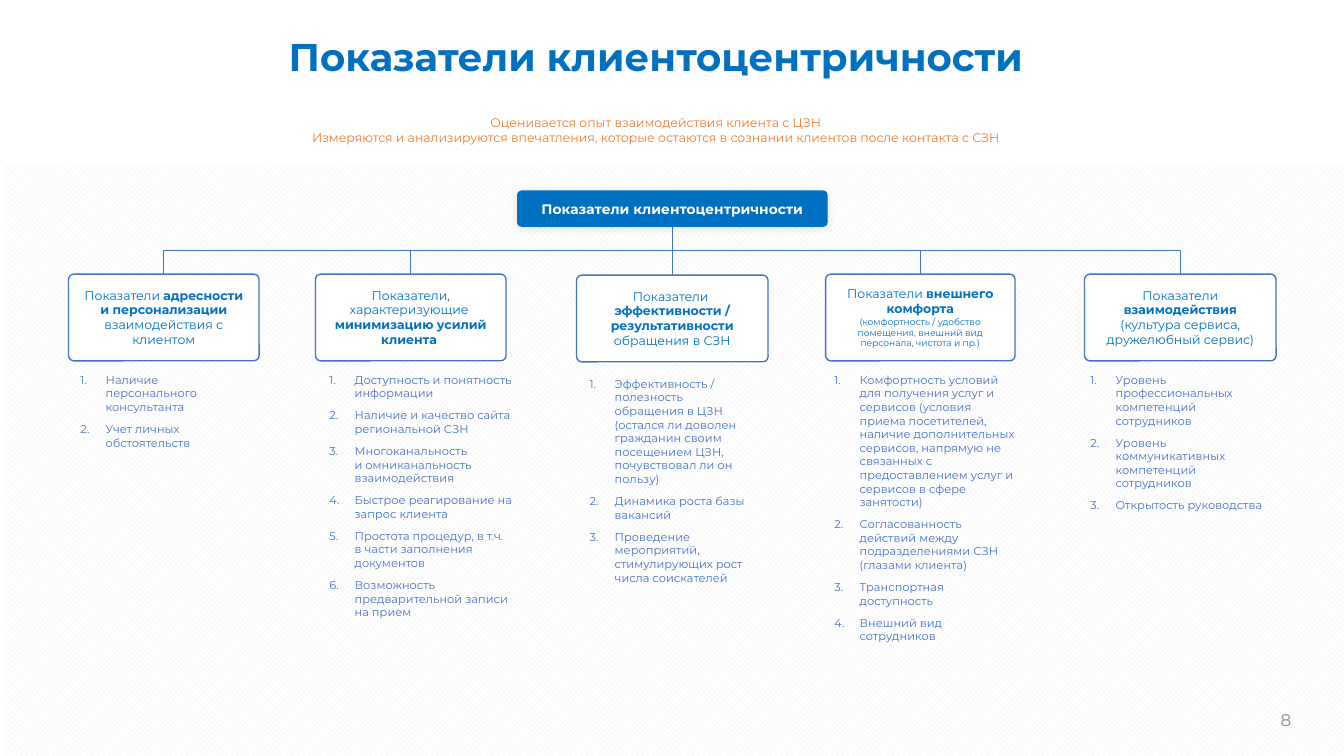
from lxml.etree import SubElement
from pptx import Presentation
from pptx.dml.color import RGBColor
from pptx.enum.dml import MSO_PATTERN
from pptx.enum.shapes import MSO_CONNECTOR, MSO_SHAPE
from pptx.enum.text import MSO_ANCHOR, PP_ALIGN
from pptx.oxml.ns import qn
from pptx.util import Pt

BLUE, LINE, ORANGE, GREY, WHITE = "0070C0", "4472C4", "ED7D31", "8C8C8C", "FFFFFF"
TOP, HIGH = 195.84, 61.92
MID, BASE = 480.24, 162

COLS = [
    (48.96, 0, 136.08, ["Показатели *адресности и персонализации *взаимодействия с клиентом"],
     50.4, 262.8, 136.08, 62.6,
     ["Наличие персонального консультанта", "Учет личных обстоятельств"]),
    (225.36, 0, 136.08, ["Показатели, характеризующие ", "*минимизацию усилий клиента *"],
     228.24, 262.8, 145.44, 185,
     ["Доступность и понятность информации",
      "Наличие и качество сайта региональной СЗН",
      "Многоканальность \nи омниканальность взаимодействия",
      "Быстрое реагирование на запрос клиента",
      "Простота процедур, в т.ч. в части заполнения документов",
      "Возможность предварительной записи на прием"]),
    (411.84, 0.72, 136.8,
     ["Показатели ", "*эффективности / результативности *обращения в СЗН"],
     414, 265.68, 128.88, 157,
     ["Эффективность / полезность обращения в ЦЗН (остался ли доволен гражданин "
      "своим посещением ЦЗН, почувствовал ли он пользу)",
      "Динамика роста базы вакансий",
      "Проведение мероприятий, стимулирующих рост числа соискателей"]),
    (589.68, 0, 135.36,
     ["Показатели *внешнего комфорта*",
      "(комфортность / удобство помещения, внешний вид персонала, чистота и пр.)"],
     588.96, 262.8, 144, 203,
     ["Комфортность условий для получения услуг и сервисов (условия приема "
      "посетителей, наличие дополнительных сервисов, напрямую не связанных с "
      "предоставлением услуг и сервисов в сфере занятости)",
      "Согласованность действий между подразделениями СЗН (глазами клиента)",
      "Транспортная доступность", "Внешний вид сотрудников"]),
    (774.72, 0, 136.8,
     ["Показатели", "*взаимодействия*", "(культура сервиса, дружелюбный сервис)"],
     771.84, 262.8, 138.96, 108,
     ["Уровень профессиональных компетенций сотрудников",
      "Уровень коммуникативных компетенций сотрудников",
      "Открытость руководства"]),
]


def tint(code):
    return RGBColor.from_string(code)


class Deck:
    """Holds the font and the current slide, and draws each kind of element."""

    def __init__(self, font):
        self.font = font
        self.file = Presentation()
        self.file.slide_width, self.file.slide_height = Pt(960), Pt(540)
        self.slide = self.file.slides.add_slide(self.file.slide_layouts[6])

    def words(self, frame, lines, size, color, align=PP_ALIGN.CENTER, listed=False):
        frame.word_wrap = True
        for i, line in enumerate(lines):
            para = frame.paragraphs[0] if i == 0 else frame.add_paragraph()
            if listed:
                props = para._p.get_or_add_pPr()
                props.set("marL", str(Pt(18)))
                props.set("indent", str(-Pt(18)))
                SubElement(props, qn("a:buAutoNum"), type="arabicPeriod")
                para.space_after = Pt(6)
            para.alignment = align
            para.font.name, para.font.size = self.font, Pt(size)
            para.font.color.rgb = tint(color)
            parts = [(text, n % 2 == 1) for n, text in enumerate(line.split("*")) if text]
            if len(parts) == 1:
                para.text, para.font.bold = parts[0]
                continue
            for text, bold in parts:
                run = para.add_run()
                run.text, run.font.bold = text, bold

    def text(self, x, y, w, h, lines, size, color, anchor=MSO_ANCHOR.TOP, **style):
        frame = self.slide.shapes.add_textbox(Pt(x), Pt(y), Pt(w), Pt(h)).text_frame
        frame.vertical_anchor = anchor
        self.words(frame, lines, size, color, **style)

    def panel(self, x, y, w, h):
        shape = self.slide.shapes.add_shape(MSO_SHAPE.RECTANGLE, Pt(x), Pt(y), Pt(w), Pt(h))
        shape.shadow.inherit = False
        shape.line.fill.background()
        shape.fill.patterned()
        shape.fill.pattern = MSO_PATTERN.OUTLINED_DIAMOND
        shape.fill.fore_color.rgb = tint("F2F2F2")
        shape.fill.back_color.rgb = tint(WHITE)

    def card(self, x, y, w, h, lines, size, color, fill, line=None, curve=0.06):
        shape = self.slide.shapes.add_shape(
            MSO_SHAPE.ROUNDED_RECTANGLE, Pt(x), Pt(y), Pt(w), Pt(h))
        shape.adjustments[0] = curve
        shape.shadow.inherit = False
        shape.fill.solid()
        shape.fill.fore_color.rgb = tint(fill)
        if line:
            shape.line.color.rgb = tint(line)
            shape.line.width = Pt(1)
        else:
            shape.line.fill.background()
        shape.text_frame.vertical_anchor = MSO_ANCHOR.MIDDLE
        self.words(shape.text_frame, lines, size, color)
        return shape

    def glow(self, shape):
        effect = shape._element.spPr.find(qn("a:effectLst"))
        outer = SubElement(effect, qn("a:outerShdw"), blurRad=str(Pt(6)),
                           dist=str(Pt(2)), dir="5400000", rotWithShape="0")
        black = SubElement(outer, qn("a:srgbClr"), val="000000")
        SubElement(black, qn("a:alpha"), val="10000")

    def link(self, x, y, to_x, to_y):
        kind, ends, turn = MSO_CONNECTOR.STRAIGHT, (x, y, to_x, to_y), 0
        if x != to_x:
            kind = MSO_CONNECTOR.ELBOW
            mid_x, mid_y = (x + to_x) / 2, (y + to_y) / 2
            half, reach = abs(to_x - x) / 2, (to_y - y) / 2
            turn = 90 if to_x < x else 270
            side = reach if turn == 90 else -reach
            ends = mid_x - side, mid_y - half, mid_x + side, mid_y + half
        wire = self.slide.shapes.add_connector(kind, *map(Pt, ends))
        wire.line.color.rgb = tint(LINE)
        wire.line.width = Pt(0.5)
        props = wire._element.spPr
        props.find(qn("a:xfrm")).set("rot", str(turn * 60000))
        SubElement(props, qn("a:effectLst"))


def main():
    deck = Deck("Montserrat")
    deck.panel(2.88, 117.36, 957.6, 427.68)
    deck.text(195.12, 20.16, 546.48, 41.04, ["*Показатели клиентоцентричности*"], 27.6, BLUE)
    deck.text(189.36, 78.48, 558, 39.6,
              ["Оценивается опыт взаимодействия клиента с ЦЗН",
               "Измеряются и анализируются впечатления, которые остаются "
               "в сознании клиентов после контакта с СЗН"], 8.9, ORANGE)
    for x, drop, w, head, list_x, list_y, list_w, list_h, items in COLS:
        card = deck.card(x, TOP + drop, w, HIGH, head, 8.9, BLUE, WHITE, LINE)
        for para in card.text_frame.paragraphs:
            if para.text.startswith("(комфортность"):
                para.font.size = Pt(6.5)
        deck.text(list_x, list_y, list_w, list_h, items, 8.1, LINE,
                  align=PP_ALIGN.LEFT, listed=True)
        end = MID if drop else x + w / 2
        deck.link(MID, BASE, end, TOP + drop)
    root = deck.card(369.36, 136.08, 221.76, 25.92,
                     ["*Показатели клиентоцентричности*"], 9.8, WHITE, BLUE, curve=0.12)
    deck.glow(root)
    deck.text(753.84, 502.56, 175.68, 23.04, ["8"], 12, GREY,
              anchor=MSO_ANCHOR.MIDDLE, align=PP_ALIGN.RIGHT)
    deck.file.save("out.pptx")


if __name__ == "__main__":
    main()
